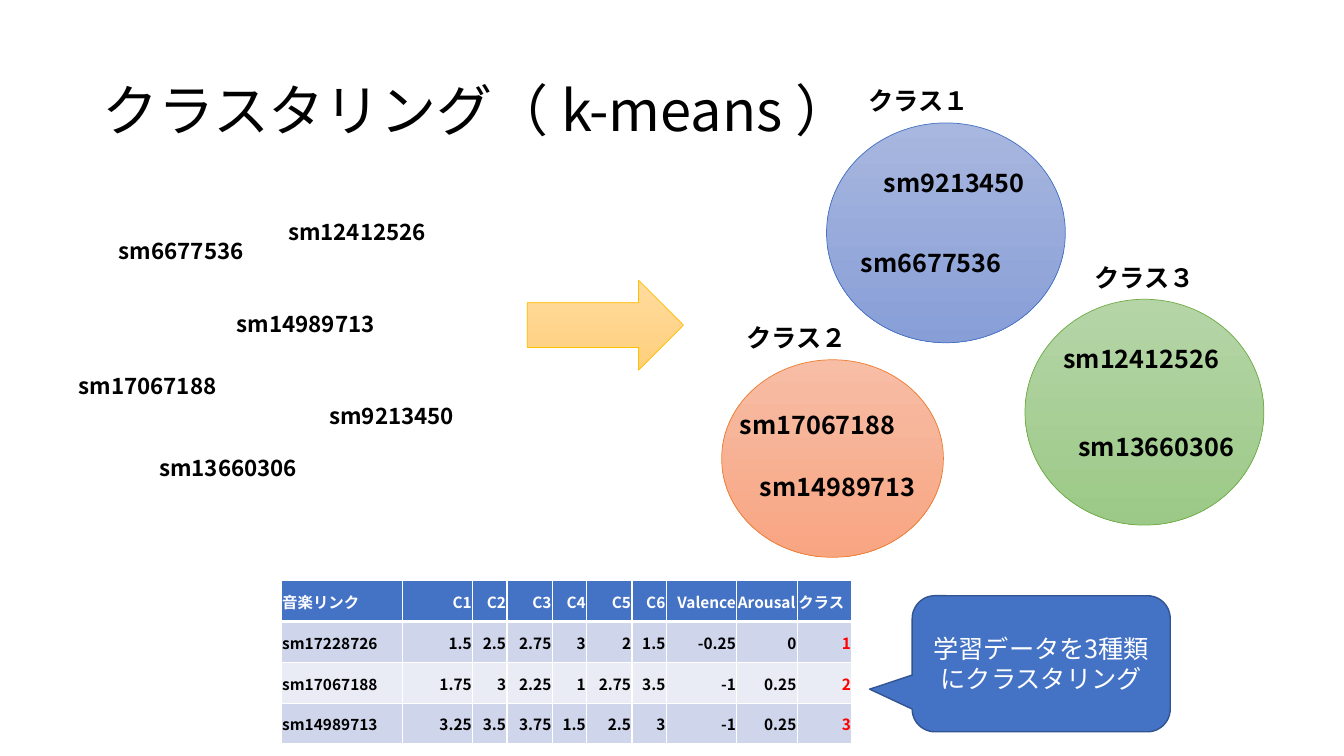
from dataclasses import dataclass

from lxml import etree
from pptx import Presentation
from pptx import util as u
from pptx.dml import color
from pptx.enum import shapes, text
from pptx.oxml import ns


@dataclass(frozen=True)
class Theme:
    """Colours, type sizes and font of the slide."""
    font: str = "Noto Sans CJK JP"
    black: str = "000000"
    white: str = "FFFFFF"
    blue: str = "4472C4"
    callout_line: str = "325491"
    red: str = "FF0000"
    bands: tuple = ("CFD5EA", "E9EBF5")
    blue_blend: tuple = ("A8B7DF", "889ED7", "4472C4")
    orange_blend: tuple = ("F7BDA5", "F8A582", "ED7D31")
    green_blend: tuple = ("B5D5A7", "9CC987", "70AD47")
    gold_blend: tuple = ("FFDB9E", "FFD07C", "FFC000")
    title_size: float = 40
    cluster_size: float = 18
    song_size: float = 16
    table_size: float = 11


THEME = Theme()
LEFT, CENTER, RIGHT = text.PP_ALIGN.LEFT, text.PP_ALIGN.CENTER, text.PP_ALIGN.RIGHT
MIDDLE = text.MSO_ANCHOR.MIDDLE


def rgb(value):
    """Turn a hex string into a colour."""
    return color.RGBColor.from_string(value)


def points(box):
    """Turn a sequence of numbers into lengths in points."""
    return [u.Pt(value) for value in box]


def write(frame, content, size, fill=THEME.black, bold=False, align=LEFT, spacing=None):
    """Write one formatted paragraph into a text frame."""
    paragraph = frame.paragraphs[0]
    paragraph.alignment = align
    paragraph.line_spacing = spacing
    run = paragraph.add_run()
    run.text = content
    run.font.size = u.Pt(size)
    run.font.bold = bold
    run.font.name = THEME.font
    run.font.color.rgb = rgb(fill)
    properties = run._r.get_or_add_rPr()
    etree.SubElement(properties, ns.qn("a:ea"), typeface=THEME.font)


def add_label(slide, box, content, size, wrap=True):
    """Add a bold text box that grows with its text."""
    frame = slide.shapes.add_textbox(*points(box)).text_frame
    frame.word_wrap = wrap
    frame.auto_size = text.MSO_AUTO_SIZE.SHAPE_TO_FIT_TEXT
    write(frame, content, size, bold=True)


def add_blend(slide, kind, box, blend):
    """Add a preset shape with a vertical gradient and a thin outline."""
    shape = slide.shapes.add_shape(kind, *points(box))
    shape.shadow.inherit = False
    shape.fill.gradient()
    shape.fill.gradient_angle = 270
    for stop, value in zip(shape.fill.gradient_stops, blend):
        stop.color.rgb = rgb(value)
    shape.line.color.rgb = rgb(blend[-1])
    shape.line.width = u.Pt(0.5)


def add_title(slide, box):
    """Add the slide title."""
    frame = slide.shapes.add_textbox(*points(box)).text_frame
    frame.word_wrap = True
    frame.vertical_anchor = MIDDLE
    write(frame, "クラスタリング（ k-means ）", THEME.title_size, spacing=0.9)


def add_songs(slide, box):
    """Scatter the unclustered songs within the box."""
    left, top, _, _ = box
    songs = [
        ("sm6677536", 28.8, 13, 103.7),
        ("sm17067188", 0, 109.5, 116),
        ("sm14989713", 113, 65.6, 116),
        ("sm9213450", 179.2, 131.1, 116),
        ("sm12412526", 149.7, 0, 116),
        ("sm13660306", 57.6, 168.5, 116),
    ]
    for name, across, down, width in songs:
        add_label(slide, (left + across, top + down, width, 26.6), name, THEME.song_size)


def add_cluster(slide, box, name, name_offset, blend, members):
    """Add a cluster ellipse with its name above and its songs inside."""
    left, top, _, _ = box
    add_blend(slide, shapes.MSO_SHAPE.OVAL, box, blend)
    add_label(slide, (left + name_offset, top - 30.2, 87.1, 28.8), name,
              THEME.cluster_size, wrap=False)
    for song, across, down in members:
        add_label(slide, (left + across, top + down, 130.3, 28.8), song, THEME.cluster_size)


def set_borders(cell, widths):
    """Give a cell white borders of the given widths in points."""
    properties = cell._tc.get_or_add_tcPr()
    for index, (side, width) in enumerate(widths.items()):
        line = etree.Element(ns.qn(f"a:ln{side}"), w=str(u.Pt(width)))
        solid = etree.SubElement(line, ns.qn("a:solidFill"))
        etree.SubElement(solid, ns.qn("a:srgbClr"), val=THEME.white)
        properties.insert(index, line)


def add_results(slide, box):
    """Add the table of songs, features and classes."""
    rows = [
        ["音楽リンク", "C1", "C2", "C3", "C4", "C5", "C6", "Valence", "Arousal", "クラス"],
        ["sm17228726", "1.5", "2.5", "2.75", "3", "2", "1.5", "-0.25", "0", "1"],
        ["sm17067188", "1.75", "3", "2.25", "1", "2.75", "3.5", "-1", "0.25", "2"],
        ["sm14989713", "3.25", "3.5", "3.75", "1.5", "2.5", "3", "-1", "0.25", "3"],
    ]
    widths = [86.4, 50.4, 24.5, 32.4, 24.5, 32.4, 24.5, 50.4, 43.2, 38.9]
    last = len(widths) - 1
    table = slide.shapes.add_table(len(rows), len(widths), *points(box)).table
    table.horz_banding = False
    for column, width in zip(table.columns, widths):
        column.width = u.Pt(width)
    for r, row in enumerate(rows):
        table.rows[r].height = u.Pt(box[3] / len(rows))
        for c, value in enumerate(row):
            cell = table.cell(r, c)
            cell.margin_left = cell.margin_right = cell.margin_top = u.Pt(0.7)
            cell.margin_bottom = 0
            cell.vertical_anchor = MIDDLE
            cell.fill.solid()
            cell.fill.fore_color.rgb = rgb(THEME.bands[(r - 1) % 2] if r else THEME.blue)
            set_borders(cell, {"L": 1, "R": 1, "T": 3 if r == 1 else 1, "B": 1 if r else 3})
            body = THEME.red if c == last else THEME.black
            flush_left = c == 0 or (r == 0 and c >= last - 1)
            write(cell.text_frame, value, THEME.table_size, bold=True,
                  fill=body if r else THEME.white, align=LEFT if flush_left else RIGHT)


def add_callout(slide, box):
    """Add the callout that points at the table."""
    shape = slide.shapes.add_shape(shapes.MSO_SHAPE.ROUNDED_RECTANGULAR_CALLOUT, *points(box))
    shape.shadow.inherit = False
    for index, value in enumerate((-0.665, 0.187, 0.167)):
        shape.adjustments[index] = value
    shape.fill.solid()
    shape.fill.fore_color.rgb = rgb(THEME.blue)
    shape.line.color.rgb = rgb(THEME.callout_line)
    shape.line.width = u.Pt(1)
    shape.text_frame.word_wrap = True
    shape.text_frame.vertical_anchor = MIDDLE
    write(shape.text_frame, "学習データを3種類にクラスタリング", THEME.cluster_size,
          fill=THEME.white, align=CENTER)


def main():
    """Build the clustering slide and save it."""
    presentation = Presentation()
    presentation.slide_width, presentation.slide_height = points((960, 540))
    slide = presentation.slides.add_slide(presentation.slide_layouts[6])
    add_title(slide, (66, 29, 828, 104.4))
    add_songs(slide, (49, 152.6, 295.2, 195.1))
    add_cluster(slide, (590.4, 87.8, 170.6, 157), "クラス１", 23, THEME.blue_blend,
                [("sm9213450", 33.8, 28.1), ("sm6677536", 17.3, 85)])
    add_cluster(slide, (515.5, 257, 158.4, 141.1), "クラス２", 10.8, THEME.orange_blend,
                [("sm17067188", 5.8, 31.7), ("sm14989713", 20.2, 76.4)])
    add_cluster(slide, (732.2, 213.8, 170.6, 161.3), "クラス３", 42.5, THEME.green_blend,
                [("sm12412526", 20.2, 28.1), ("sm13660306", 31, 90.8)])
    add_blend(slide, shapes.MSO_SHAPE.RIGHT_ARROW, (376.6, 200.2, 111.6, 64.1),
              THEME.gold_blend)
    add_results(slide, (200.9, 414.7, 407.6, 116.8))
    add_callout(slide, (651.6, 425.5, 184.3, 97.2))
    presentation.save("out.pptx")


if __name__ == "__main__":
    main()
